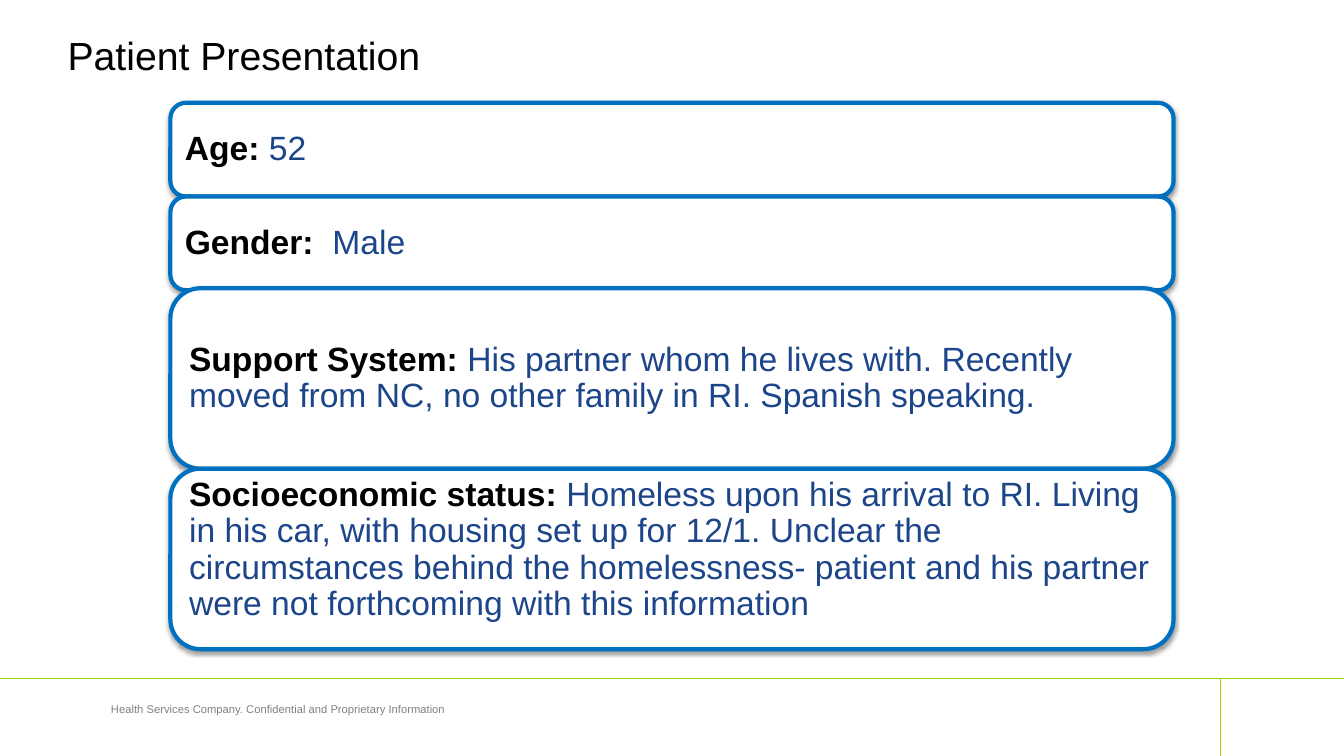
"""Build the patient presentation slide with its four stacked fact cards."""
from dataclasses import dataclass

from lxml import etree
from pptx import Presentation
from pptx.dml.color import RGBColor
from pptx.enum.shapes import MSO_CONNECTOR, MSO_SHAPE
from pptx.enum.text import MSO_ANCHOR, MSO_AUTO_SIZE, PP_ALIGN
from pptx.oxml.ns import qn
from pptx.util import Inches, Pt

STRAIGHT = MSO_CONNECTOR.STRAIGHT
ROUNDED = MSO_SHAPE.ROUNDED_RECTANGLE
TOP, MIDDLE = MSO_ANCHOR.TOP, MSO_ANCHOR.MIDDLE
LEFT, CENTER = PP_ALIGN.LEFT, PP_ALIGN.CENTER
NO_FIT = MSO_AUTO_SIZE.NONE
TITLE_ONLY = 5


@dataclass(frozen=True)
class Theme:
    font: str = "Arial"
    ink: str = "000000"
    paper: str = "FFFFFF"
    answer: str = "1C458A"
    border: str = "0070C0"
    rule: str = "95D600"
    muted: str = "808080"
    title_size: int = 28
    card_size: int = 24
    footer_size: int = 8
    border_width: float = 3
    rule_width: float = 0.5
    card_spacing: float = 0.9


class SlideBuilder:
    def __init__(self, deck, theme):
        self.deck = deck
        self.theme = theme
        self.page = deck.slides.add_slide(deck.slide_layouts[TITLE_ONLY])

    def place(self, column, row):
        """Turn a position on the 100 by 100 grid into slide lengths."""
        return (round(self.deck.slide_width * column / 100),
                round(self.deck.slide_height * row / 100))

    def add_run(self, para, text, size, color, bold=False):
        span = para.add_run()
        span.text = text
        span.font.name = self.theme.font
        span.font.size = Pt(size)
        span.font.bold = bold
        span.font.color.rgb = RGBColor.from_string(color)

    def set_frame(self, frame, anchor, margin, top_margin):
        frame.word_wrap = True
        frame.auto_size = NO_FIT
        frame.vertical_anchor = anchor
        frame.margin_left = frame.margin_right = frame.margin_bottom = Inches(margin)
        frame.margin_top = Inches(top_margin)
        return frame.paragraphs[0]

    def title(self, text, column, row, columns, rows):
        box = self.page.shapes.title
        box.left, box.top = self.place(column, row)
        box.width, box.height = self.place(columns, rows)
        para = self.set_frame(box.text_frame, MIDDLE, 0, 0)
        para.alignment = LEFT
        self.add_run(para, text, self.theme.title_size, self.theme.ink)

    def rule(self, start, end):
        line = self.page.shapes.add_connector(
            STRAIGHT, *self.place(*start), *self.place(*end))
        line.line.color.rgb = RGBColor.from_string(self.theme.rule)
        line.line.width = Pt(self.theme.rule_width)
        etree.SubElement(line._element.spPr, qn("a:effectLst"))

    def footer(self, text, column, row, columns, rows):
        box = self.page.shapes.add_textbox(
            *self.place(column, row), *self.place(columns, rows))
        para = self.set_frame(box.text_frame, TOP, 0.1, 0.05)
        para.alignment = CENTER
        self.add_run(para, text, self.theme.footer_size, self.theme.muted)

    def add_shadow(self, shape):
        shape.shadow.inherit = False
        effects = shape._element.spPr.find(qn("a:effectLst"))
        shadow = etree.SubElement(
            effects, qn("a:outerShdw"), blurRad=str(Pt(3.1)), dist=str(Pt(1.6)),
            dir="5400000", rotWithShape="0")
        color = etree.SubElement(shadow, qn("a:srgbClr"), val=self.theme.ink)
        etree.SubElement(color, qn("a:alpha"), val="38000")

    def card(self, label, answer, column, row, columns, rows, anchor, top_margin):
        theme = self.theme
        card = self.page.shapes.add_shape(
            ROUNDED, *self.place(column, row), *self.place(columns, rows))
        card.fill.solid()
        card.fill.fore_color.rgb = RGBColor.from_string(theme.paper)
        card.line.color.rgb = RGBColor.from_string(theme.border)
        card.line.width = Pt(theme.border_width)
        self.add_shadow(card)
        para = self.set_frame(card.text_frame, anchor, 0.1, top_margin)
        para.alignment = LEFT
        para.line_spacing = theme.card_spacing
        self.add_run(para, label, theme.card_size, theme.ink, bold=True)
        self.add_run(para, answer, theme.card_size, theme.answer)


def main():
    deck = Presentation()
    deck.slide_width, deck.slide_height = Inches(13.33), Inches(7.5)
    slide = SlideBuilder(deck, Theme())

    footer_row, divider_column = 89.73, 90.77
    slide.rule((divider_column, 100), (divider_column, footer_row))
    slide.rule((0, footer_row), (100, footer_row))
    slide.footer("Health Services Company. Confidential and Proprietary Information",
                 3.15, 92.27, 35.11, 5.6)
    slide.title("Patient Presentation", 5.03, 3.73, 71.27, 6.93)

    short, tall = 12.4, 23.87
    cards = [
        ("Age: ", "52", 13.6, short, MIDDLE, 0.1),
        ("Gender:  ", "Male", 26, short, MIDDLE, 0.1),
        ("Support System: ",
         "His partner whom he lives with. Recently moved from NC, "
         "no other family in RI. Spanish speaking.", 38.13, tall, MIDDLE, 0.1),
        ("Socioeconomic status: ",
         "Homeless upon his arrival to RI. Living in his car, with housing set up "
         "for 12/1. Unclear the circumstances behind the homelessness- patient and "
         "his partner were not forthcoming with this information",
         62, tall, TOP, 0),
    ]
    for label, answer, row, rows, anchor, top_margin in cards:
        slide.card(label, answer, 12.68, row, 74.64, rows, anchor, top_margin)

    deck.save("out.pptx")


if __name__ == "__main__":
    main()
